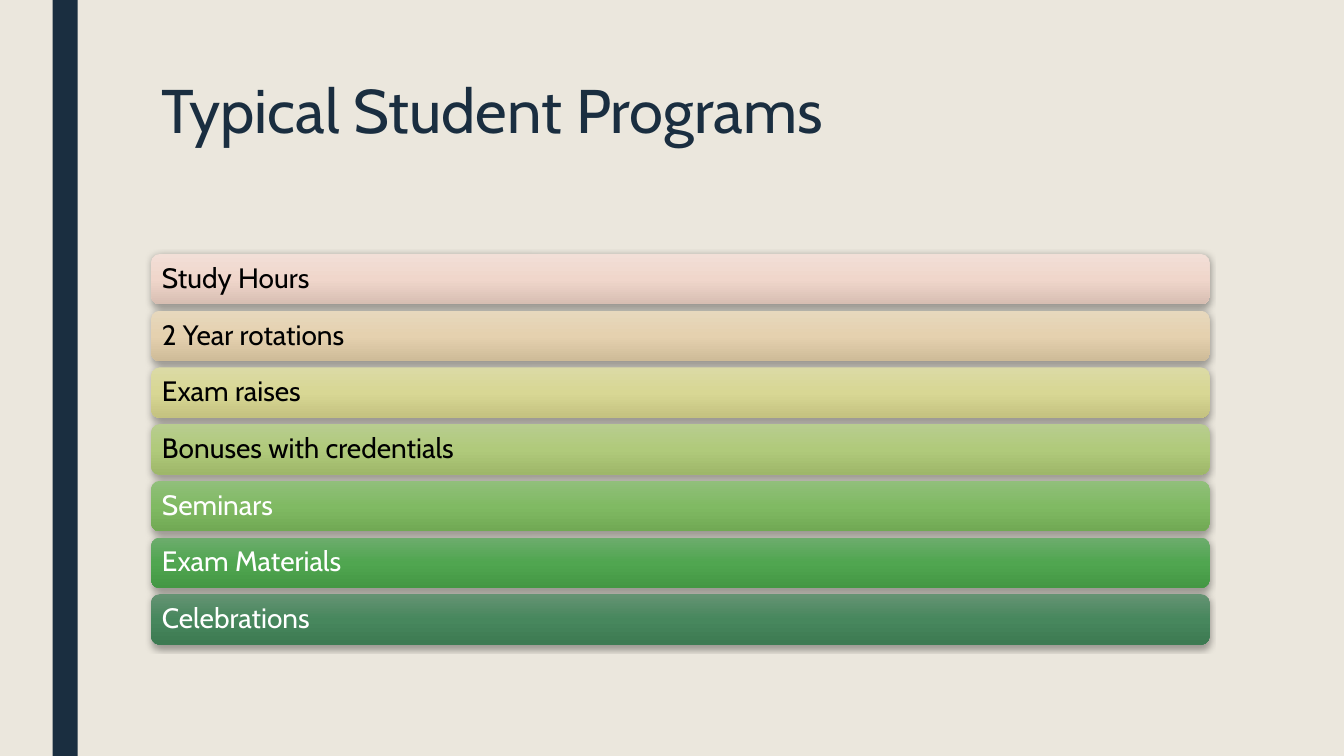
from copy import deepcopy

from lxml.etree import SubElement
from pptx import Presentation
from pptx.dml.color import RGBColor
from pptx.enum.shapes import MSO_SHAPE as Preset
from pptx.enum.text import MSO_ANCHOR as Anchor, PP_ALIGN as Align
from pptx.oxml.ns import qn
from pptx.util import Pt

EMU_PER_PX = 9525
NAVY = "1A2E40"
BLACK = "000000"
WHITE = "FFFFFF"

PROGRAMS = [
    ("Study Hours", BLACK, ("F2DFD7", "F0D6CB", "D7BEB2")),
    ("2 Year rotations", BLACK, ("E7D8BD", "E5D1AF", "CEBB98")),
    ("Exam raises", BLACK, ("DBDAA5", "D8D794", "C4C280")),
    ("Bonuses with credentials", BLACK, ("B8CD8F", "B0CA7B", "9EB769")),
    ("Seminars", WHITE, ("91BF7B", "80BA63", "71A954")),
    ("Exam Materials", WHITE, ("6DAC6D", "50A650", "449744")),
    ("Celebrations", WHITE, ("659373", "47875D", "3D7A52")),
]


def px(length):
    return length * EMU_PER_PX


def color(hex_code):
    return RGBColor.from_string(hex_code)


def style(target, values):
    for name, value in values.items():
        setattr(target, name, value)


class Deck:
    font = "Cabin"
    background = "EBE7DD"

    def __init__(self, width, height):
        self.presentation = Presentation()
        style(self.presentation, {"slide_width": px(width), "slide_height": px(height)})
        self.slide = self.presentation.slides.add_slide(self.presentation.slide_layouts[6])
        fill = self.slide.background.fill
        fill.solid()
        fill.fore_color.rgb = color(self.background)

    def label(self, shape, text, size, hex_code, spacing, anchor, inset_x, inset_y):
        frame = shape.text_frame
        style(frame, {
            "word_wrap": True, "vertical_anchor": anchor,
            "margin_left": px(inset_x), "margin_right": px(inset_x),
            "margin_top": px(inset_y), "margin_bottom": px(inset_y),
        })
        paragraph = frame.paragraphs[0]
        style(paragraph, {"alignment": Align.LEFT, "line_spacing": spacing})
        run = paragraph.add_run()
        run.text = text
        style(run.font, {"name": self.font, "size": Pt(size)})
        run.font.color.rgb = color(hex_code)

    def title(self, box, text):
        heading = self.slide.shapes.add_textbox(*map(px, box))
        self.label(heading, text, 44, NAVY, 0.89, Anchor.TOP, 10, 5)

    def shape(self, preset, box):
        shape = self.slide.shapes.add_shape(preset, *map(px, box))
        shape.shadow.inherit = False
        shape.line.fill.background()
        return shape

    def stripe(self, box, hex_code):
        stripe = self.shape(Preset.RECTANGLE, box)
        stripe.fill.solid()
        stripe.fill.fore_color.rgb = color(hex_code)

    def gradient(self, shape, hex_codes):
        fill = shape.fill
        fill.gradient()
        fill.gradient_angle = 270
        stop_list = shape.element.spPr.find(qn("a:gradFill")).find(qn("a:gsLst"))
        stop_list.append(deepcopy(stop_list[-1]))
        for index, (stop, hex_code) in enumerate(zip(fill.gradient_stops, hex_codes)):
            stop.position = index / (len(hex_codes) - 1)
            stop.color.rgb = color(hex_code)

    def drop_shadow(self, shape):
        effects = shape.element.spPr.find(qn("a:effectLst"))
        shadow = SubElement(effects, qn("a:outerShdw"), {
            "blurRad": str(Pt(4.5)), "dist": str(Pt(1.5)),
            "dir": "5400000", "rotWithShape": "0",
        })
        tone = SubElement(shadow, qn("a:srgbClr"), {"val": BLACK})
        SubElement(tone, qn("a:alpha"), {"val": "35000"})

    def bar(self, box, text, text_color, hex_codes):
        bar = self.shape(Preset.ROUNDED_RECTANGLE, box)
        self.gradient(bar, hex_codes)
        self.drop_shadow(bar)
        self.label(bar, text, 20, text_color, 0.9, Anchor.MIDDLE, 8, 8)


def main():
    deck = Deck(1280, 720)
    deck.stripe((50, 0, 24, 720), NAVY)
    deck.title((144, 72, 1008, 156), "Typical Student Programs")
    for row, (program, text_color, hex_codes) in enumerate(PROGRAMS):
        deck.bar((144, 242 + 54 * row, 1008, 48), program, text_color, hex_codes)
    deck.presentation.save("out.pptx")


if __name__ == "__main__":
    main()
